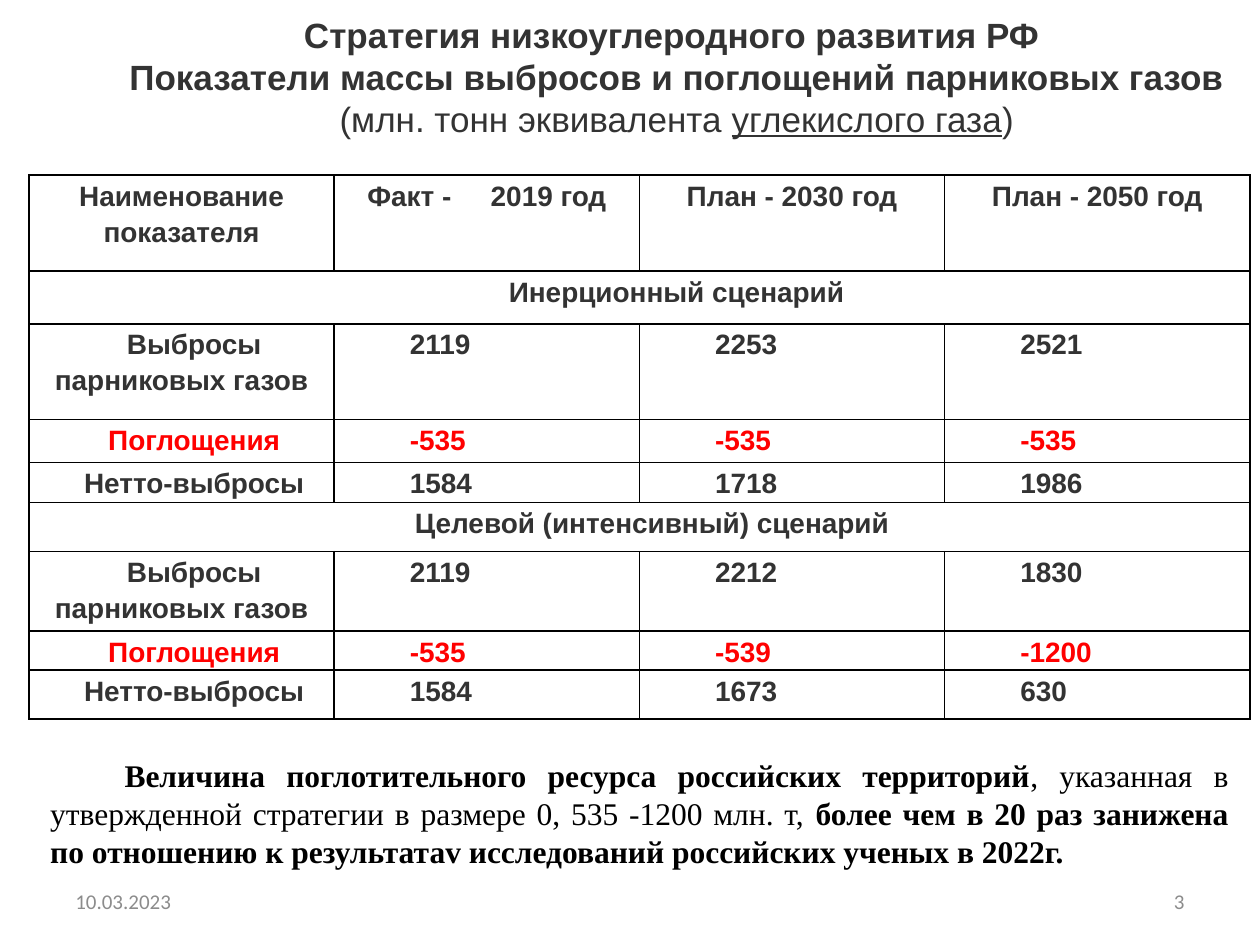
from pptx import Presentation, util as u
from pptx.dml.color import RGBColor
from pptx.enum import text as t
from pptx.oxml import parse_xml
from pptx.oxml.ns import nsdecls

# Content: a run is (text, format changes)
HEADING = [
    [("Стратегия низкоуглеродного развития РФ ", {})],
    [("Показатели массы выбросов и поглощений парниковых газов", {})],
    [("(млн. тонн эквивалента ", {"bold": False}),
     ("углекислого газа", {"bold": False, "underline": True}),
     (")", {"bold": False})],
]
COLUMNS = [
    [("Наименование показателя", {})],
    [("Факт -", {}), (" ", {"spacing": 18}), ("2019\u00a0год", {})],
    [("План - 2030\u00a0год", {})],
    [("План - 2050\u00a0год", {})],
]
INDICATORS = ["Выбросы парниковых газов", "Поглощения", "Нетто-выбросы"]
SCENARIOS = [  # name, indent of the name, values by indicator
    ("Инерционный сценарий", 0.59,
     [(2119, 2253, 2521), (-535, -535, -535), (1584, 1718, 1986)]),
    ("Целевой (интенсивный) сценарий", 0.2,
     [(2119, 2212, 1830), (-535, -539, -1200), (1584, 1673, 630)]),
]
CONCLUSION = [[
    ("Величина поглотительного ресурса российских территорий", {"bold": True}),
    (", указанная в утвержденной стратегии в размере 0, 535 -1200 млн. т, ", {}),
    ("более чем в 20 раз занижена по отношению к результатаv исследований "
     "российских ученых в 2022г.", {"bold": True}),
]]
DATE, NUMBER = "10.03.2023", "3"

# Theme and grid
THEME = {
    "heading": {"name": "Arial", "size": 20, "color": "333333", "bold": True},
    "cell": {"name": "Arial", "size": 16, "color": "333333", "bold": True},
    "absorbed": {"name": "Arial", "size": 16, "color": "FF0000", "bold": True},
    "conclusion": {"name": "Times New Roman", "size": 18, "color": "000000"},
    "footer": {"name": "Calibri", "size": 12, "color": "8C8C8C"},
    "paper": "FFFFFF",
    "border": "000000",
}
WIDTH, HEIGHT = 10, 7.5
TEXT_LEFT, TEXT_WIDTH, FIRST_LINE = 0.3, 9.55, 0.59
TABLE_LEFT, TABLE_TOP, TABLE_WIDTH = 0.23, 1.39, 9.69
ROW_HEIGHTS = [0.76, 0.42, 0.76, 0.34, 0.32, 0.39, 0.63, 0.31, 0.39]
CELL_MARGIN, LABEL_INDENT = 0.01, 0.2
FOOTER_TOP, FOOTER_WIDTH, FOOTER_HEIGHT, FOOTER_EDGE = 6.95, 2.33, 0.4, 0.5
ALIGN = t.PP_ALIGN


def box(*lengths):
    return [u.Inches(length) for length in lengths]


def write(frame, paragraphs, style, align, indent=0, line_spacing=1.0):
    for i, runs in enumerate(paragraphs):
        paragraph = frame.paragraphs[0] if i == 0 else frame.add_paragraph()
        paragraph.alignment, paragraph.line_spacing = align, line_spacing
        paragraph._p.get_or_add_pPr().set("indent", str(u.Inches(indent)))
        for words, changes in runs:
            run = paragraph.add_run()
            run.text = words
            for key, value in {**THEME[style], **changes}.items():
                if key == "color":
                    run.font.color.rgb = RGBColor.from_string(value)
                elif key == "spacing":
                    run._r.get_or_add_rPr().set("spc", str(value * 100))
                else:
                    setattr(run.font, key, u.Pt(value) if key == "size" else value)


def fill_cell(cell, runs, style="cell", align=ALIGN.CENTER, indent=0):
    for side in ("left", "right", "top", "bottom"):
        setattr(cell, f"margin_{side}", u.Inches(CELL_MARGIN))
    write(cell.text_frame, [runs], style, align, indent, 1.15)


def frame_cell(cell):
    properties = cell._tc.get_or_add_tcPr()
    for side in ("lnL", "lnR", "lnT", "lnB"):
        properties.append(parse_xml(
            f'<a:{side} {nsdecls("a")} w="{u.Pt(1)}"><a:solidFill>'
            f'<a:srgbClr val="{THEME["border"]}"/></a:solidFill></a:{side}>'))
    cell.fill.solid()
    cell.fill.fore_color.rgb = RGBColor.from_string(THEME["paper"])


def add_text(slide, place, paragraphs, style, align, indent=0, anchor=t.MSO_ANCHOR.TOP):
    frame = slide.shapes.add_textbox(*box(*place)).text_frame
    frame.word_wrap, frame.vertical_anchor = True, anchor
    write(frame, paragraphs, style, align, indent)


def add_heading(slide):
    heading = slide.shapes.title
    heading.left, heading.top, heading.width, heading.height = box(
        TEXT_LEFT, 0.05, TEXT_WIDTH, 1.11)
    frame = heading.text_frame
    frame.word_wrap, frame.auto_size = True, t.MSO_AUTO_SIZE.NONE
    frame.vertical_anchor = t.MSO_ANCHOR.MIDDLE
    write(frame, HEADING, "heading", ALIGN.CENTER, FIRST_LINE)


def add_emissions_table(slide):
    table = slide.shapes.add_table(
        len(ROW_HEIGHTS), len(COLUMNS),
        *box(TABLE_LEFT, TABLE_TOP, TABLE_WIDTH, sum(ROW_HEIGHTS))).table
    table.first_row = table.horz_banding = False
    for column in table.columns:
        column.width = u.Inches(TABLE_WIDTH / len(COLUMNS))
    for row, height in zip(table.rows, ROW_HEIGHTS):
        row.height = u.Inches(height)

    for c, runs in enumerate(COLUMNS):
        fill_cell(table.cell(0, c), runs)
    for s, (scenario, indent, rows) in enumerate(SCENARIOS):
        top = 1 + s * (len(INDICATORS) + 1)
        table.cell(top, 0).merge(table.cell(top, len(COLUMNS) - 1))
        fill_cell(table.cell(top, 0), [(scenario, {})], indent=indent)
        for r, (indicator, values) in enumerate(zip(INDICATORS, rows), top + 1):
            style = "absorbed" if indicator == "Поглощения" else "cell"
            fill_cell(table.cell(r, 0), [(indicator, {})], style, indent=LABEL_INDENT)
            for c, value in enumerate(values, 1):
                fill_cell(table.cell(r, c), [(str(value), {})], style,
                          ALIGN.LEFT, FIRST_LINE)
    for cell in table.iter_cells():
        frame_cell(cell)


def main():
    deck = Presentation()
    deck.slide_width, deck.slide_height = box(WIDTH, HEIGHT)
    slide = deck.slides.add_slide(deck.slide_layouts[5])  # title only

    add_heading(slide)
    add_emissions_table(slide)
    add_text(slide, (TEXT_LEFT, 5.95, TEXT_WIDTH, 1.01), CONCLUSION,
             "conclusion", ALIGN.JUSTIFY, FIRST_LINE)

    # Footer: date on the left, slide number on the right
    for words, left, align in (
            (DATE, FOOTER_EDGE, ALIGN.LEFT),
            (NUMBER, WIDTH - FOOTER_EDGE - FOOTER_WIDTH, ALIGN.RIGHT)):
        add_text(slide, (left, FOOTER_TOP, FOOTER_WIDTH, FOOTER_HEIGHT),
                 [[(words, {})]], "footer", align, anchor=t.MSO_ANCHOR.MIDDLE)
    deck.save("out.pptx")


if __name__ == "__main__":
    main()
